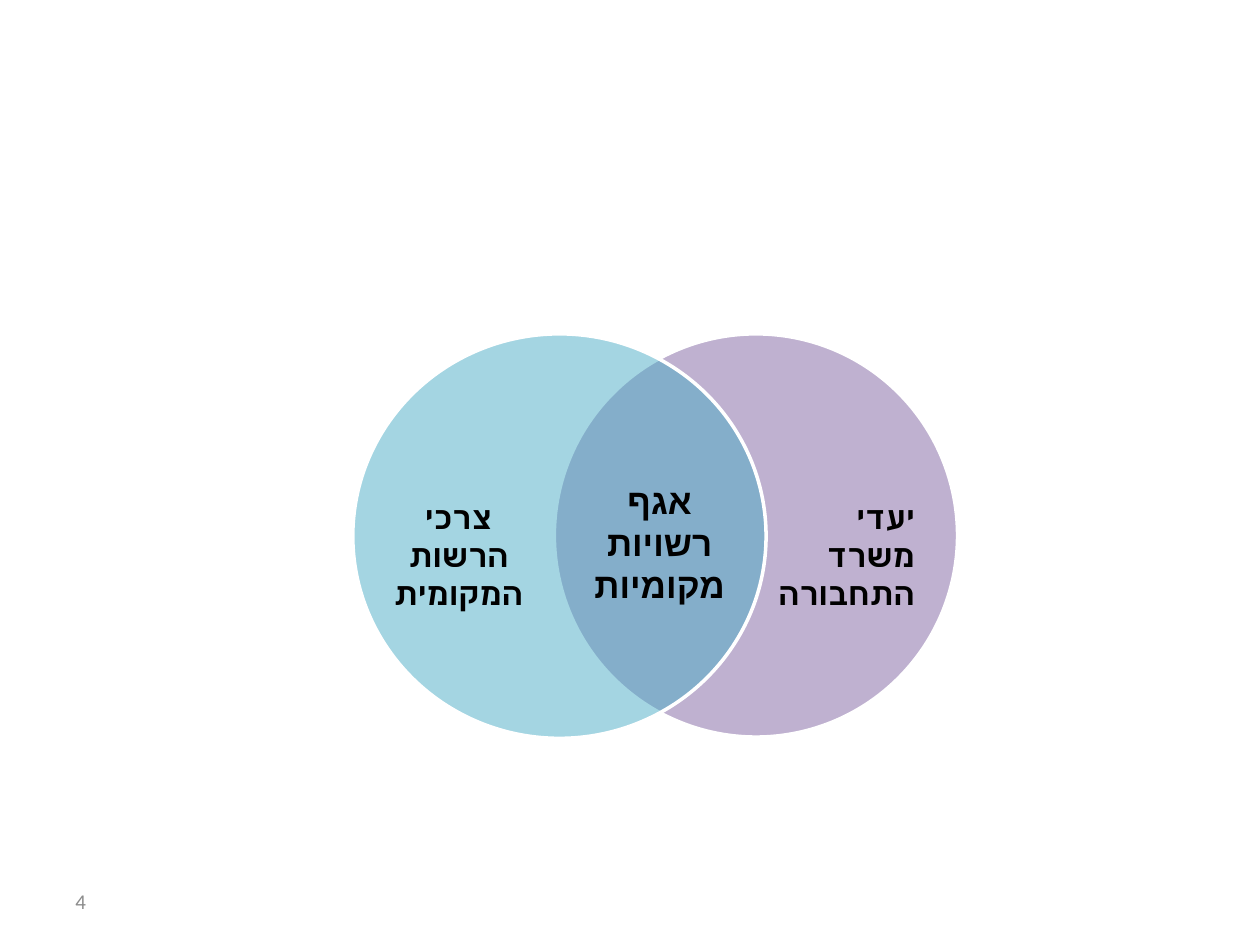
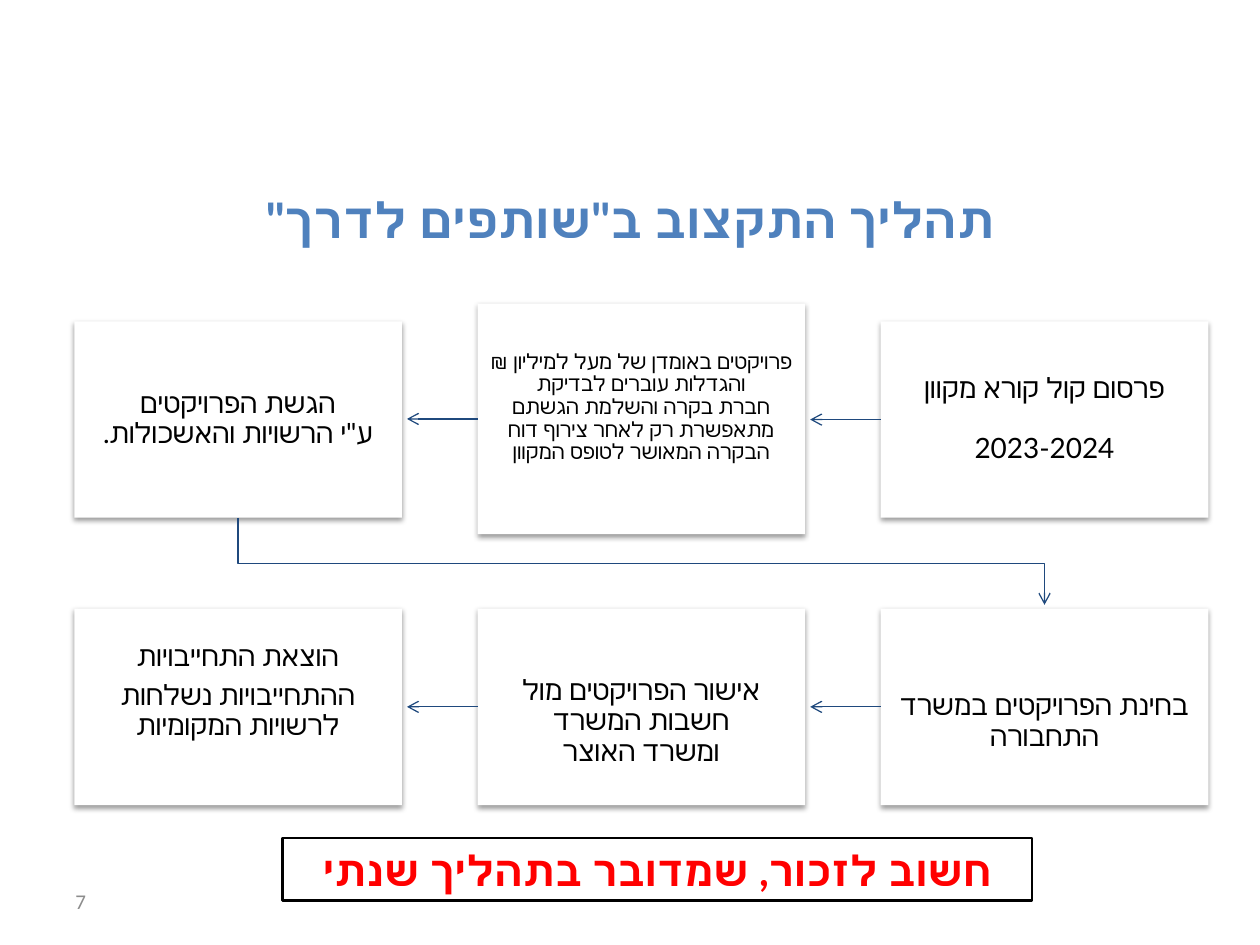
from copy import deepcopy

from lxml import etree
from pptx import Presentation, util as u
from pptx.dml.color import RGBColor
from pptx.enum import shapes, text
from pptx.oxml.ns import qn

CELL = u.Inches(0.1)  # the grid has 100 columns and 75 rows
MID = text.PP_ALIGN.CENTER
RIGHT = text.PP_ALIGN.RIGHT
LEFT = text.PP_ALIGN.LEFT
BLACK, WHITE, GREY = "000000", "FFFFFF", "8C8C8C"
BLUE, NAVY, RED = "4F81BD", "1F497D", "FF0000"
PURPLE, TEAL = "8064A2", "4BACC6"


def grid(*cells):
    return [round(c * CELL) for c in cells]


def paint(target, hue):
    target.rgb = RGBColor.from_string(hue)


def child(parent, tag, **attrs):
    return etree.SubElement(parent, qn(tag), {k: str(v) for k, v in attrs.items()})


class Deck:
    """Holds the shared style and the slide being built."""

    def __init__(self):
        self.file = Presentation()
        self.file.slide_width, self.file.slide_height = grid(100, 75)
        self.slide = None

    def page(self, number, title=None):
        """Start a slide with its number and, if given, a title."""
        layout = self.file.slide_layouts[5 if title else 6]
        self.slide = self.file.slides.add_slide(layout)
        if title:
            head = self.slide.shapes.title
            head.left, head.top, head.width, head.height = grid(5, 14.2, 90, 6.3)
            self.letter(head, [title], 28, BLUE, bold=True)
        self.label((5, 69.5, 23.3, 4), [number], 12, GREY, font="Calibri",
                   align=LEFT, rtl=False)

    def letter(self, shape, lines, size, hue=BLACK, font="Lato", bold=False,
               align=MID, rtl=True, gap=0, lead=None):
        """Fill a shape with formatted paragraphs."""
        frame = shape.text_frame
        frame.text = "\n".join(lines)
        frame.word_wrap = True
        frame.vertical_anchor = text.MSO_ANCHOR.MIDDLE
        for i, para in enumerate(frame.paragraphs):
            para.alignment = align
            if rtl:
                para._p.get_or_add_pPr().set("rtl", "1")
            if lead:
                para.line_spacing = lead
            if i and gap:
                para.space_before = u.Pt(gap)
            for run in para.runs:
                run.font.name, run.font.size, run.font.bold = font, u.Pt(size), bold
                run.font.fill.solid()
                paint(run.font.fill.fore_color, hue)
                child(run._r.rPr, "a:cs", typeface=font)
            for br in para._p.findall(qn("a:br")):
                br.append(deepcopy(para.runs[0]._r.rPr))

    def label(self, place, lines, size, hue=BLACK, **style):
        box = self.slide.shapes.add_textbox(*grid(*place))
        self.letter(box, lines, size, hue, **style)

    def shape(self, kind, place, fill=None, line=None, width=1.0):
        item = self.slide.shapes.add_shape(kind, *grid(*place))
        item.shadow.inherit = False
        if fill:
            item.fill.solid()
            paint(item.fill.fore_color, fill)
        else:
            item.fill.background()
        if line:
            paint(item.line.color, line)
            item.line.width = u.Pt(width)
        else:
            item.line.fill.background()
        return item

    def circle(self, place, hue):
        item = self.shape(shapes.MSO_SHAPE.OVAL, place, hue, WHITE, 2)
        tint = item.element.spPr.find(qn("a:solidFill"))[0]
        child(tint, "a:alpha", val=50000)

    def card(self, place, lines, size=16, inset=1.2, above=0, below=0, gap=5):
        """Draw a white box with a soft shadow; above and below pad its text."""
        item = self.shape(shapes.MSO_SHAPE.RECTANGLE, place, WHITE)
        glow = child(item.element.spPr.find(qn("a:effectLst")), "a:outerShdw",
                     blurRad=u.Pt(3.1), dist=u.Pt(1.6), dir=5400000, rotWithShape=0)
        child(child(glow, "a:srgbClr", val=BLACK), "a:alpha", val=38000)
        frame = item.text_frame
        frame.margin_left, frame.margin_right = grid(inset, inset)
        frame.margin_top, frame.margin_bottom = grid(inset + above, inset + below)
        self.letter(item, lines, size, gap=gap, lead=0.9)
        return item

    def point(self, item):
        """Give a line its colour, width and arrowhead."""
        paint(item.line.color, NAVY)
        item.line.width = u.Pt(0.75)
        child(item.element.spPr.find(qn("a:ln")), "a:tailEnd", type="arrow")

    def arrow(self, card, reach):
        """Draw an arrow from the left side of a card."""
        x, y = card.left, card.top + card.height // 2
        item = self.slide.shapes.add_connector(
            shapes.MSO_CONNECTOR.STRAIGHT, x, y, x - round(reach * CELL), y)
        item.begin_connect(card, 1)
        self.point(item)
        child(item.element.spPr, "a:effectLst")

    def bend(self, start, *turns):
        pen = self.slide.shapes.build_freeform(*grid(*start))
        pen.add_line_segments([grid(*t) for t in turns], close=False)
        item = pen.convert_to_shape()
        item.fill.background()
        item.shadow.inherit = False
        self.point(item)


def venn(deck):
    deck.page("4")
    deck.circle((44, 26.5, 32, 32), PURPLE)
    deck.circle((28, 26.5, 32.8, 32.1), TEAL)
    deck.label((59.4, 39, 14.2, 10.1), ["יעדי\vמשרד", "התחבורה"], 18,
               bold=True, align=RIGHT)
    deck.label((28.7, 39, 15.4, 10.1), ["צרכי\vהרשות", "המקומית"], 18, bold=True)
    deck.label((43.7, 37.5, 17.3, 11.1), ["אגף\vרשויות\vמקומיות"], 20,
               font="Arial", bold=True)


def process(deck):
    deck.page("7", 'תהליך התקצוב ב"שותפים לדרך"')
    wide, tall, line = 26, 15.6, 2.4
    cols = [5.9 + 32 * n for n in (2, 1, 0)]
    high, low = 25.5, 48.3
    steps = [
        (high, tall, ["פרסום קול קורא מקוון", "2023-2024"], dict(gap=17)),
        (24.1, 18.3, ["פרויקטים באומדן של מעל למיליון ₪ והגדלות עוברים לבדיקת\v"
                      "חברת בקרה והשלמת הגשתם מתאפשרת רק לאחר צירוף דוח "
                      "הבקרה המאושר לטופס המקוון"],
         dict(size=12, inset=0.9, below=1.8)),
        (high, tall, ['הגשת הפרויקטים\vע"י הרשויות והאשכולות.'], {}),
        (low, tall, ["בחינת הפרויקטים במשרד התחבורה"], dict(above=line)),
        (low, tall, ["אישור הפרויקטים מול חשבות המשרד\vומשרד האוצר"],
         dict(above=line)),
        (low, tall, ["הוצאת התחייבויות", "ההתחייבויות נשלחות לרשויות המקומיות"],
         dict(below=line)),
    ]
    for i, (top, height, lines, style) in enumerate(steps):
        card = deck.card((cols[i % 3], top, wide, height), lines, **style)
        if i % 3 < 2:
            deck.arrow(card, 5.6)
    first, last = cols[2] + wide / 2, cols[0] + wide / 2
    turn = (high + tall + low) / 2
    deck.bend((first, high + tall), (first, turn), (last, turn), (last, low - 0.3))
    note = deck.shape(shapes.MSO_SHAPE.RECTANGLE, (22.4, 66.5, 59.5, 5),
                      line=BLACK, width=1.5)
    deck.letter(note, ["חשוב לזכור, שמדובר בתהליך שנתי"], 24, RED, bold=True)


def main():
    deck = Deck()
    venn(deck)
    process(deck)
    deck.file.save("out.pptx")


if __name__ == "__main__":
    main()
